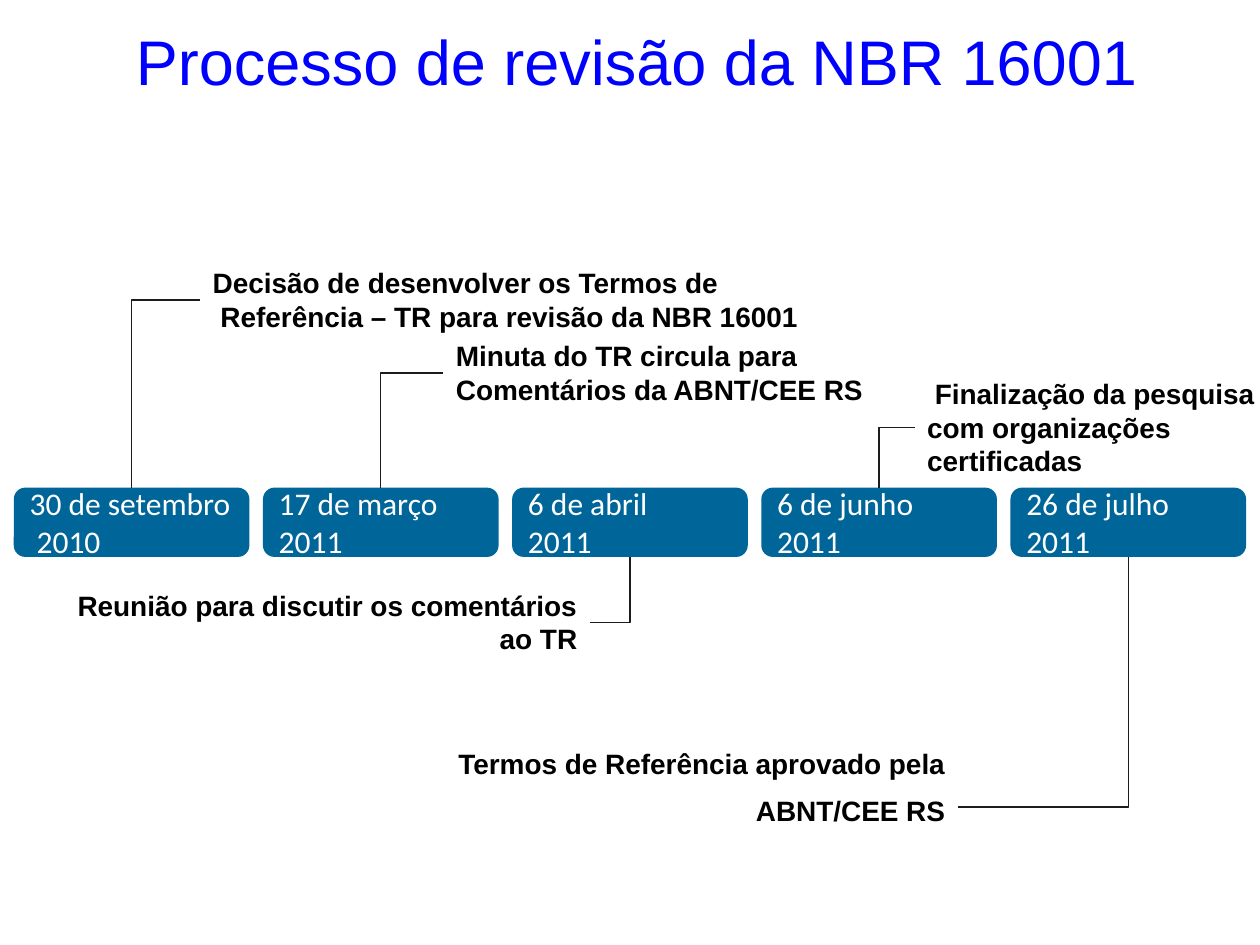
"""Build the timeline slide on the revision of NBR 16001."""
import dataclasses

import lxml.etree
import pptx
import pptx.dml.color
import pptx.enum.shapes
import pptx.enum.text
import pptx.oxml.ns
import pptx.util

ALIGN = pptx.enum.text.PP_ALIGN
WIDE, HIGH = 10, 7.5
COUNT, EDGE, CARD_W, CARD_H, CARD_TOP = 5, 0.11, 1.87, 0.55, 3.87
STEP = (WIDE - 2 * EDGE - CARD_W) / (COUNT - 1)


@dataclasses.dataclass(frozen=True)
class Theme:
    """Colours, fonts and type sizes of the slide."""
    title: str = "0000FF"
    card: str = "006699"
    light: str = "FFFFFF"
    ink: str = "000000"
    line: str = "1C1C1C"
    body: str = "Arial"
    date: str = "Calibri"
    big: int = 36
    mid: int = 18
    small: int = 16
    thin: float = 0.75


THEME = Theme()

DATES = ["30 de setembro\n 2010", "17 de março\n2011", "6 de abril\n2011",
         "6 de junho\n2011", "26 de julho\n2011"]

# card, text, left, top, width, height, spaced
NOTES = [
    (0, "Decisão de desenvolver os Termos de\n"
        " Referência – TR para revisão da NBR 16001", 1.59, 2.06, 4.9, 0.64, False),
    (1, "Minuta do TR circula para\nComentários da ABNT/CEE RS",
     3.52, 2.64, 4.38, 0.64, False),
    (2, "Reunião para discutir os comentários ao TR", 0.35, 4.62, 4.33, 0.64, False),
    (3, " Finalização da pesquisa\ncom organizações\ncertificadas",
     7.26, 2.94, 2.84, 0.91, False),
    (4, "Termos de Referência aprovado pela\nABNT/CEE RS",
     3.42, 5.82, 4.18, 1.17, True),
]


def inch(*nums):
    """Turn numbers into lengths in inches."""
    return [pptx.util.Inches(num) for num in nums]


def shade(code):
    """Turn a hex code into a colour."""
    return pptx.dml.color.RGBColor.from_string(code)


def write(frame, text, face, size, code, bold=False, align=ALIGN.LEFT):
    """Fill a text frame with one paragraph per line of text."""
    frame.text = text
    for para in frame.paragraphs:
        para.alignment = align
        para.font.name = face
        para.font.size = pptx.util.Pt(size)
        para.font.bold = bold
        para.font.color.rgb = shade(code)


def add_text(slide, box, text, size, code, bold=False, align=ALIGN.LEFT):
    """Add a wrapping text box and return its frame."""
    frame = slide.shapes.add_textbox(*inch(*box)).text_frame
    frame.word_wrap = True
    write(frame, text, THEME.body, size, code, bold, align)
    return frame


def add_card(slide, col, text):
    """Add the date card of one column."""
    kind = pptx.enum.shapes.MSO_SHAPE.ROUNDED_RECTANGLE
    card = slide.shapes.add_shape(
        kind, *inch(EDGE + col * STEP, CARD_TOP, CARD_W, CARD_H))
    card.shadow.inherit = False
    card.fill.solid()
    card.fill.fore_color.rgb = shade(THEME.card)
    card.line.fill.background()
    card.text_frame.word_wrap = False
    card.text_frame.vertical_anchor = pptx.enum.text.MSO_ANCHOR.MIDDLE
    write(card.text_frame, text, THEME.date, THEME.mid, THEME.light)


def add_bend(slide, start, end):
    """Add a one-corner connector that leaves its start sideways."""
    kind = pptx.enum.shapes.MSO_CONNECTOR.ELBOW
    bend = slide.shapes.add_connector(kind, *inch(*start, *end))
    bend.line.color.rgb = shade(THEME.line)
    bend.line.width = pptx.util.Pt(THEME.thin)
    name = pptx.oxml.ns.qn
    props = bend._element.spPr
    props.find(name("a:prstGeom")).set("prst", "bentConnector2")
    lxml.etree.SubElement(props, name("a:effectLst"))


def add_note(slide, col, text, left, top, width, height, spaced):
    """Add a note and the connector that leads to its card."""
    above = top < CARD_TOP
    align = ALIGN.LEFT if above else ALIGN.RIGHT
    frame = add_text(slide, (left, top, width, height), text,
                     THEME.small, THEME.ink, True, align)
    if spaced:
        for para in frame.paragraphs:
            para.line_spacing = 1.2
            para.space_before = pptx.util.Pt(4)
    start = (left if above else left + width, top + height / 2)
    end = (EDGE + col * STEP + CARD_W / 2, CARD_TOP + (0 if above else CARD_H))
    add_bend(slide, start, end)


def main():
    """Build and save the slide."""
    deck = pptx.Presentation()
    deck.slide_width, deck.slide_height = inch(WIDE, HIGH)
    slide = deck.slides.add_slide(deck.slide_layouts[6])
    for col, text in enumerate(DATES):
        add_card(slide, col, text)
    for note in NOTES:
        add_note(slide, *note)
    add_text(slide, (0.98, 0.13, 8.23, 0.71), "Processo de revisão da NBR 16001",
             THEME.big, THEME.title)
    deck.save("out.pptx")


if __name__ == "__main__":
    main()
